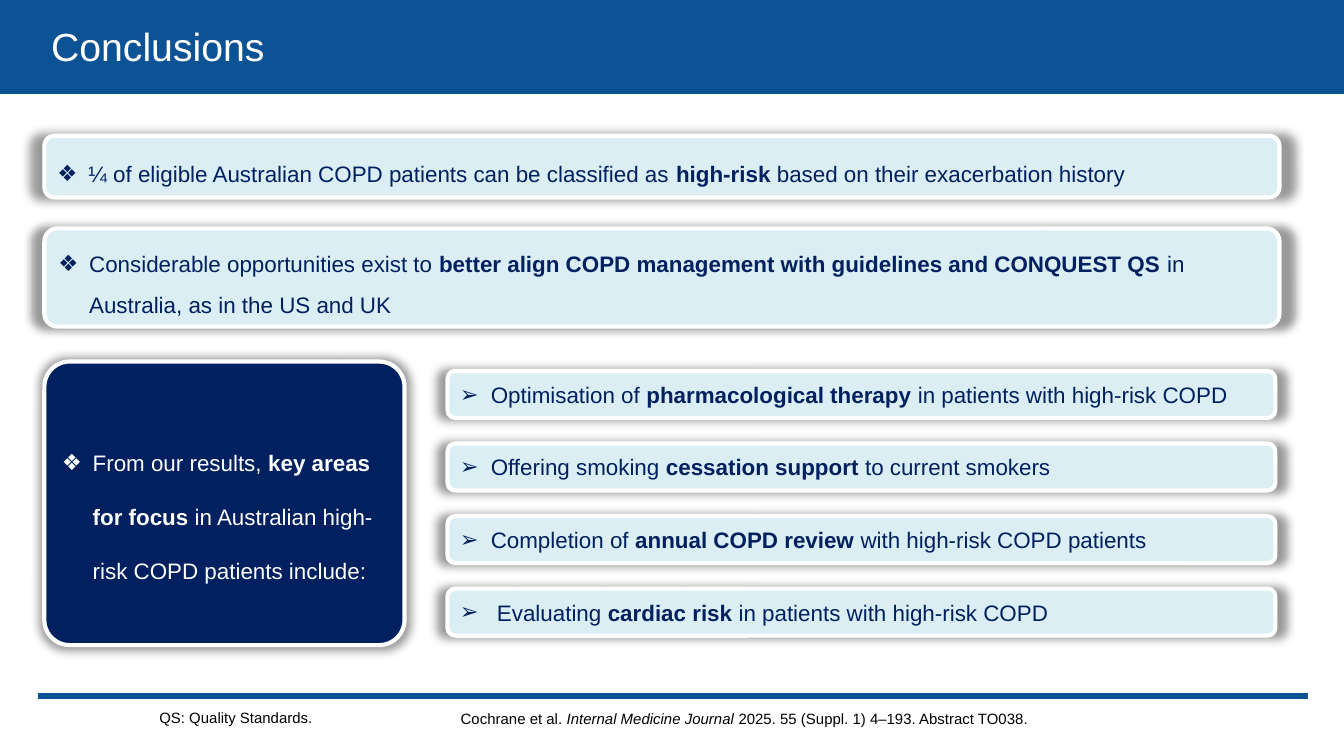
import pptx
import pptx.dml.color
import pptx.enum.shapes
import pptx.enum.text
import pptx.oxml.ns
import pptx.util
from lxml import etree

RGBColor = pptx.dml.color.RGBColor
Inches, Pt = pptx.util.Inches, pptx.util.Pt
Shape = pptx.enum.shapes.MSO_SHAPE
Anchor = pptx.enum.text.MSO_ANCHOR
qn = pptx.oxml.ns.qn

BLUE = RGBColor(0x0B, 0x53, 0x94)
NAVY = RGBColor(0x00, 0x20, 0x60)
PALE = RGBColor(0xDB, 0xEE, 0xF4)
WHITE = RGBColor(0xFF, 0xFF, 0xFF)
BLACK = RGBColor(0x00, 0x00, 0x00)

# Content: each sentence is (plain, emphasised, plain)
TITLE = "Conclusions"
FINDINGS = [
    ("¼ of eligible Australian COPD patients can be classified as ", "high-risk",
     " based on their exacerbation history"),
    ("Considerable opportunities exist to ",
     "better align COPD management with guidelines and CONQUEST QS ",
     "in Australia, as in the US and UK"),
]
FOCUS_INTRO = ("From our results, ", "key areas for focus",
               " in Australian high-risk COPD patients include:")
FOCUS_AREAS = [
    ("Optimisation of ", "pharmacological therapy ", "in patients with high-risk COPD"),
    ("Offering smoking ", "cessation support ", "to current smokers"),
    ("Completion of ", "annual COPD review ", "with high-risk COPD patients"),
    (" Evaluating ", "cardiac risk ", "in patients with high-risk COPD"),
]
ABBREVIATION = ("QS: Quality Standards.",)
CITATION = ("Cochrane et al. ", "Internal Medicine Journal ",
            "2025. 55 (Suppl. 1) 4–193. Abstract TO038.")

# Layout, in inches; text insets in points
WIDTH = 10
HEIGHT = WIDTH * 9 / 16
BAND_HEIGHT = 0.7
LEFT, FINDING_WIDTH = 0.33, 9.19
FINDING_TOP, FINDING_GAP = 1.01, 0.23
FINDING_HEIGHTS, FINDING_CORNERS = (0.46, 0.73), (0.167, 0.133)
INTRO_TOP, INTRO_WIDTH, INTRO_HEIGHT = 2.69, 2.68, 2.11
AREA_LEFT, AREA_TOP, AREA_WIDTH, AREA_HEIGHT = 3.33, 2.76, 6.16, 0.35
AREA_PITCH = 0.54
RULE_LEFT, RULE_RIGHT, RULE_Y = 0.28, 9.73, 5.18
SIDE_INSET = 5.4


def write_runs(paragraph, parts, size, color, emphasis="bold"):
    """Add the parts as runs, with every second one emphasised."""
    for index, part in enumerate(parts):
        run = paragraph.add_run()
        run.text = part
        run.font.name, run.font.size = "Arial", Pt(size)
        run.font.color.rgb = color
        setattr(run.font, emphasis, index % 2 == 1)


def set_insets(frame, horizontal, vertical):
    frame.margin_left = frame.margin_right = Pt(horizontal)
    frame.margin_top = frame.margin_bottom = Pt(vertical)


def add_glow_shadow(shape):
    """Add a soft, centred shadow slightly larger than the shape."""
    shape.shadow.inherit = False
    effects = shape._element.spPr.find(qn("a:effectLst"))
    shadow = etree.SubElement(effects, qn("a:outerShdw"), blurRad=str(Pt(5)), dist="0",
                              sx="102000", sy="102000", algn="ctr", rotWithShape="0")
    color = etree.SubElement(shadow, qn("a:srgbClr"), val="000000")
    etree.SubElement(color, qn("a:alpha"), val="40000")


def add_bullet(paragraph, symbol):
    properties = paragraph._p.get_or_add_pPr()
    properties.set("marL", str(Inches(0.23)))
    properties.set("indent", str(Inches(-0.23)))
    etree.SubElement(properties, qn("a:buFont"), typeface="Arial")
    etree.SubElement(properties, qn("a:buChar"), char=symbol)


def add_card(slide, box, parts, corner, bullet, spacing=1.0, fill=PALE, color=NAVY):
    card = slide.shapes.add_shape(Shape.ROUNDED_RECTANGLE, *map(Inches, box))
    card.adjustments[0] = corner
    card.fill.solid()
    card.fill.fore_color.rgb = fill
    card.line.color.rgb = WHITE
    card.line.width = Pt(2.25)
    add_glow_shadow(card)
    frame = card.text_frame
    frame.word_wrap = True
    frame.vertical_anchor = Anchor.MIDDLE
    set_insets(frame, SIDE_INSET, SIDE_INSET)
    paragraph = frame.paragraphs[0]
    paragraph.alignment = pptx.enum.text.PP_ALIGN.LEFT
    paragraph.line_spacing = spacing
    add_bullet(paragraph, bullet)
    write_runs(paragraph, parts, 12, color)


def add_footnote(slide, box, parts, insets=(7.2, 3.6), spacing=1.0):
    frame = slide.shapes.add_textbox(*map(Inches, box)).text_frame
    frame.word_wrap = True
    set_insets(frame, *insets)
    frame.paragraphs[0].line_spacing = spacing
    write_runs(frame.paragraphs[0], parts, 8, BLACK, "italic")


def add_header(slide):
    band = slide.shapes.add_shape(Shape.RECTANGLE, 0, 0, Inches(WIDTH), Inches(BAND_HEIGHT))
    band.shadow.inherit = False
    band.fill.solid()
    band.fill.fore_color.rgb = BLUE
    band.line.fill.background()
    title = slide.shapes.title
    title._element.addprevious(band._element)
    title.left, title.top, title.width, title.height = map(Inches, (0.28, 0.11, 6.53, 0.46))
    title.text_frame.vertical_anchor = Anchor.MIDDLE
    paragraph = title.text_frame.paragraphs[0]
    paragraph.alignment = pptx.enum.text.PP_ALIGN.LEFT
    write_runs(paragraph, (TITLE,), 21, WHITE)


def add_rule(slide):
    rule = slide.shapes.add_connector(
        pptx.enum.shapes.MSO_CONNECTOR.STRAIGHT,
        *map(Inches, (RULE_LEFT, RULE_Y, RULE_RIGHT, RULE_Y)))
    rule.line.color.rgb = BLUE
    rule.line.width = Pt(3)
    etree.SubElement(rule._element.spPr, qn("a:effectLst"))


def main():
    deck = pptx.Presentation()
    deck.slide_width, deck.slide_height = Inches(WIDTH), Inches(HEIGHT)
    slide = deck.slides.add_slide(deck.slide_layouts.get_by_name("Title Only"))
    add_header(slide)

    top = FINDING_TOP
    for parts, height, corner in zip(FINDINGS, FINDING_HEIGHTS, FINDING_CORNERS):
        add_card(slide, (LEFT, top, FINDING_WIDTH, height), parts, corner, "❖", 1.5)
        top += height + FINDING_GAP

    add_card(slide, (LEFT, INTRO_TOP, INTRO_WIDTH, INTRO_HEIGHT), FOCUS_INTRO,
             0.089, "❖", 2.0, NAVY, WHITE)
    for row, parts in enumerate(FOCUS_AREAS):
        box = (AREA_LEFT, AREA_TOP + row * AREA_PITCH, AREA_WIDTH, AREA_HEIGHT)
        add_card(slide, box, parts, 0.167, "➢")

    add_rule(slide)
    add_footnote(slide, (1.11, 5.17, 1.48, 0.25), ABBREVIATION, (SIDE_INSET, 2.7), 1.5)
    add_footnote(slide, (AREA_LEFT, 5.23, 4.77, 0.24), CITATION)
    deck.save("out.pptx")


if __name__ == "__main__":
    main()
